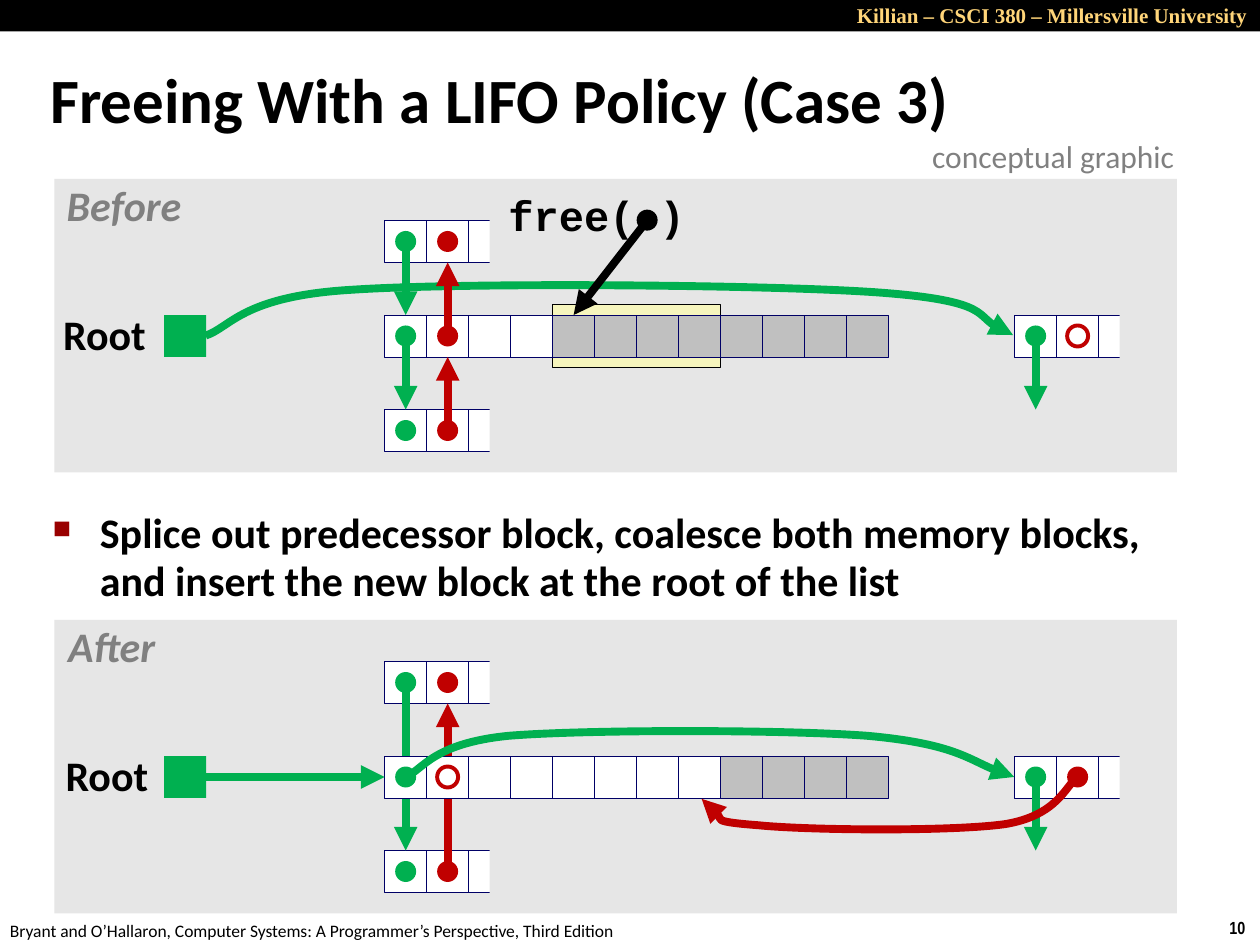
from dataclasses import dataclass

from lxml import etree
from pptx import Presentation
from pptx import util as u
from pptx.dml.color import RGBColor
from pptx.enum import shapes, text
from pptx.oxml.ns import qn


@dataclass(frozen=True)
class Theme:
    black: str = "000000"
    white: str = "FFFFFF"
    gold: str = "FFD579"
    panel: str = "E6E6E6"
    muted: str = "808080"
    header: str = "F6F5BD"
    allocated: str = "C0C0C0"
    border: str = "000066"
    bullet: str = "990000"
    next: str = "00B050"
    prev: str = "C00000"
    font: str = "Calibri"
    title: int = 36
    body: int = 24
    note: int = 18
    top: int = 12
    small: int = 10
    arrow: float = 4.5


T = Theme()
RECT, OVAL = shapes.MSO_SHAPE.RECTANGLE, shapes.MSO_SHAPE.OVAL
LEFT, CENTER, RIGHT = text.PP_ALIGN.LEFT, text.PP_ALIGN.CENTER, text.PP_ALIGN.RIGHT
CELL, ROW_GAP, X0 = 24, 54, 219.8   # memory word, list-row pitch, first column
BEFORE, AFTER = 180, 432            # top of the heap row in each diagram
FAR = 15                            # column of the old first free block


def col(i):
    return X0 + CELL * i


def rgb(color):
    return RGBColor.from_string(color)


def add_shape(s, kind, x, y, w, h, fill=None, line=None, width=0.25):
    sp = s.shapes.add_shape(kind, u.Pt(x), u.Pt(y), u.Pt(w), u.Pt(h))
    sp.shadow.inherit = False
    if fill:
        sp.fill.solid()
        sp.fill.fore_color.rgb = rgb(fill)
    else:
        sp.fill.background()
    if line:
        sp.line.color.rgb = rgb(line)
        sp.line.width = u.Pt(width)
    else:
        sp.line.fill.background()
    return sp


def add_text(s, words, x, y, w, h, size, color=T.black, font=T.font, bold=False,
             italic=False, align=LEFT, wrap=False, spacing=None, inset=None):
    sp = s.shapes.add_textbox(u.Pt(x), u.Pt(y), u.Pt(w), u.Pt(h))
    tf = sp.text_frame
    tf.word_wrap = wrap
    if inset is not None:
        tf.margin_left = tf.margin_right = tf.margin_top = tf.margin_bottom = u.Pt(inset)
    p = tf.paragraphs[0]
    p.alignment = align
    if spacing:
        p.line_spacing = spacing
    r = p.add_run()
    r.text = words
    r.font.name, r.font.size = font, u.Pt(size)
    r.font.bold, r.font.italic = bold, italic
    r.font.color.rgb = rgb(color)
    return sp


def add_label(s, words, x, y, w, **style):
    return add_text(s, words, x, y, w, 33.8, T.body, bold=True, align=CENTER,
                    spacing=0.9, inset=3.6, **style)


def add_bullet(sp):
    pPr = sp.text_frame.paragraphs[0]._p.get_or_add_pPr()
    pPr.set("marL", str(u.Pt(27)))
    pPr.set("indent", str(u.Pt(-27)))
    color = etree.SubElement(pPr, qn("a:buClr"))
    etree.SubElement(color, qn("a:srgbClr"), val=T.bullet)
    etree.SubElement(pPr, qn("a:buSzPct"), val="60000")
    etree.SubElement(pPr, qn("a:buChar"), char="■")


def style_arrow(sp, color):
    sp.line.color.rgb = rgb(color)
    sp.line.width = u.Pt(T.arrow)
    etree.SubElement(sp.line._get_or_add_ln(), qn("a:tailEnd"), type="triangle")


def add_arrow(s, x1, y1, x2, y2, color, target=None, side=0):
    c = s.shapes.add_connector(shapes.MSO_CONNECTOR.STRAIGHT,
                               u.Pt(x1), u.Pt(y1), u.Pt(x2), u.Pt(y2))
    style_arrow(c, color)
    etree.SubElement(c._element.spPr, qn("a:effectLst"))
    if target is not None:
        c.end_connect(target, side)


def add_curve(s, points, color):
    """Cubic curve: a start point, then three points for each segment."""
    pts = [(u.Pt(x), u.Pt(y)) for x, y in points]
    builder = s.shapes.build_freeform(*pts[0], scale=1.0)
    builder.add_line_segments(pts[1:], close=False)
    sp = builder.convert_to_shape()
    sp.shadow.inherit = False
    sp.fill.background()
    style_arrow(sp, color)
    outline = sp._element.xpath(".//a:path")[0]
    lines = outline.findall(qn("a:lnTo"))
    for i in range(0, len(lines), 3):
        bezier = etree.SubElement(outline, qn("a:cubicBezTo"))
        for ln in lines[i:i + 3]:
            bezier.append(ln[0])
            outline.remove(ln)


def add_cells(s, first, count, y, fill=T.white):
    return [add_shape(s, RECT, col(first + i), y, CELL, CELL, fill, T.border)
            for i in range(count)]


def add_open_block(s, first, y):
    """Start of a free block; its right end is cut off."""
    cells = add_cells(s, first, 3, y)
    add_shape(s, RECT, col(first + 2.5), y - 6, CELL, 36, T.panel)
    return cells


def add_dot(s, column, y, color, null=False):
    box = (col(column) + 6, y + 6, 12, 12)
    if null:
        add_shape(s, OVAL, *box, line=color, width=2.25)
    else:
        add_shape(s, OVAL, *box, fill=color)


def add_panel(s, y, words, x, w):
    add_shape(s, RECT, 31, y - 77.8, 641.5, 167.8, T.panel)
    add_label(s, words, x, y - 77.8, w, color=T.muted, italic=True)


def add_root(s, y, x):
    add_shape(s, RECT, 93.8, y, CELL, CELL, T.next)
    add_label(s, "Root", x, y - 4, 54.7)


def add_neighbours(s, y):
    """List blocks above and below the heap row, and the far block."""
    return [add_open_block(s, c, row) for c, row in
            ((0, y - ROW_GAP), (0, y + ROW_GAP), (FAR, y))]


def add_dots(s, y, heap_prev_null, far_prev_null):
    for row in (y - ROW_GAP, y, y + ROW_GAP):
        add_dot(s, 0, row, T.next)
        add_dot(s, 1, row, T.prev, null=heap_prev_null and row == y)
    add_dot(s, FAR, y, T.next)
    add_dot(s, FAR + 1, y, T.prev, null=far_prev_null)
    x = col(FAR + 0.5)
    add_arrow(s, x, y + 12, x, y + ROW_GAP, T.next)


def link_next(s, y, target):
    add_arrow(s, col(0.5), y + 12, col(0.5), y + ROW_GAP, T.next, target, 0)


def link_prev(s, y, target):
    add_arrow(s, col(1.5), y + 12, col(1.5), y - 30, T.prev, target, 2)


def draw_before(s):
    y = BEFORE
    add_panel(s, y, "Before", 33.8, 74.2)
    add_shape(s, RECT, col(4), y - 6, 4 * CELL, 36, T.header, T.black, 0.75)
    add_curve(s, [(117.5, 191.8), (131.8, 187.2), (138.2, 169.2), (201.6, 165.6),
                  (265.7, 161.3), (436.3, 162.7), (499.7, 167),
                  (562.3, 171.4), (562.3, 186.5), (578.9, 191.5)], T.next)
    heap = add_cells(s, 0, 4, y) + add_cells(s, 4, 8, y, T.allocated)
    above, below, _ = add_neighbours(s, y)
    link_next(s, y - ROW_GAP, heap[0])
    link_next(s, y, below[0])
    link_prev(s, y + ROW_GAP, heap[1])
    link_prev(s, y, above[1])
    add_dots(s, y, heap_prev_null=False, far_prev_null=True)
    add_root(s, y, 32.4)
    # Call that frees the allocated block
    add_label(s, "free( )", 286.6, 108, 108.7, font="Courier New")
    add_shape(s, OVAL, 363.8, 119.8, 12, 12, T.black)
    add_arrow(s, 369.8, 126, col(4.5), y, T.black, heap[4], 0)


def draw_after(s):
    y = AFTER
    add_panel(s, y, "After", 34.6, 58.3)
    above, below, _ = add_neighbours(s, y)
    # These links pass behind the heap row
    link_top, link_bottom = y - ROW_GAP + 12, y + ROW_GAP + 12
    add_arrow(s, col(1.5), link_bottom, col(1.5), y - 30, T.prev, above[1], 2)
    add_arrow(s, col(0.5), link_top, col(0.5), y + ROW_GAP, T.next, below[0], 0)
    heap = add_cells(s, 0, 8, y) + add_cells(s, 8, 4, y, T.allocated)
    add_dots(s, y, heap_prev_null=True, far_prev_null=False)
    add_root(s, y, 33.8)
    add_arrow(s, 111.8, y + 12, col(0), y + 12, T.next, heap[0], 1)
    add_curve(s, [(231.8, 444), (241.9, 439.9), (247, 424.8), (290.9, 420.5),
                  (334.8, 416.9), (447.1, 416.9), (495.4, 420.5),
                  (543.6, 424.8), (562.3, 439.2), (579.6, 444)], T.next)
    add_curve(s, [(615.8, 444), (609.1, 448.6), (604.8, 465.8), (574.6, 470.9),
                  (544.3, 475.2), (462.2, 474.5), (433.4, 471.6),
                  (404.6, 469.4), (407.5, 460.1), (401, 456.5)], T.prev)


def main():
    prs = Presentation()
    prs.slide_width, prs.slide_height = u.Pt(720), u.Pt(540)
    s = prs.slides.add_slide(prs.slide_layouts[6])

    # Header bar and footer
    add_shape(s, RECT, 0, 0, 720, 18, T.black)
    add_text(s, "Killian – CSCI 380 – Millersville University", 396, -2, 324, 21.6, T.top,
             T.gold, "Times New Roman", bold=True, align=RIGHT, wrap=True)
    add_text(s, "10", 695.5, 520.6, 24.5, 19.4, T.small, font="Arial Narrow", bold=True)
    add_text(s, "Bryant and O’Hallaron, Computer Systems: A Programmer’s Perspective, "
             "Third Edition", -1.4, 522, 365.8, 19.4, T.small)

    # Title and message
    title = add_text(s, "Freeing With a LIFO Policy (Case 3)", 21.6, 28, 686.2, 62,
                     T.title, bold=True, wrap=True, spacing=0.87)
    title.text_frame.vertical_anchor = text.MSO_ANCHOR.MIDDLE
    add_text(s, "conceptual graphic", 525.6, 74.9, 156.2, 28.8, T.note, T.muted)
    body = add_text(s, "Splice out predecessor block, coalesce both memory blocks, and "
                    "insert the new block at the root of the list", 23, 288, 654.5, 62,
                    T.body, bold=True, wrap=True, spacing=0.95)
    add_bullet(body)

    # Free-list diagrams
    draw_before(s)
    draw_after(s)
    prs.save("out.pptx")


if __name__ == "__main__":
    main()
